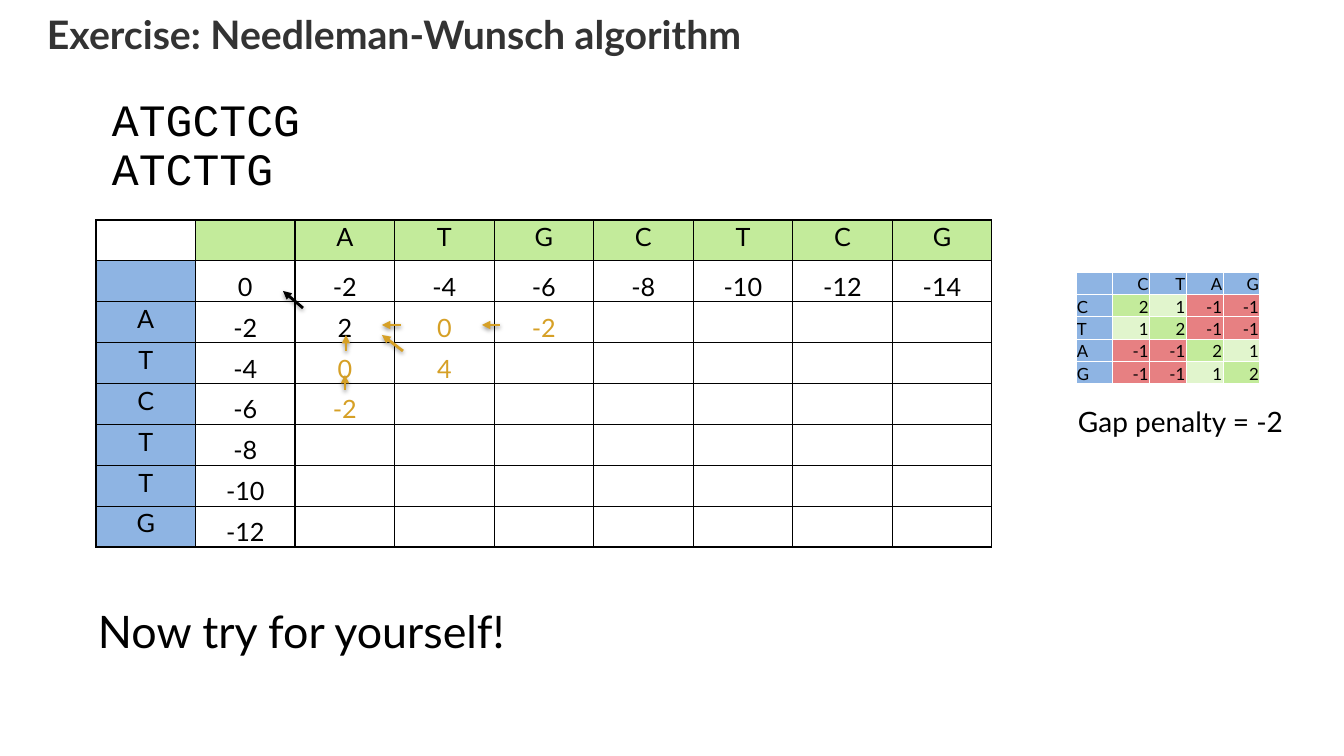
from lxml import etree
from pptx import Presentation
from pptx import util as u
from pptx.dml.color import RGBColor
from pptx.enum import shapes, text
from pptx.oxml import parse_xml
from pptx.oxml.ns import nsdecls, qn

EMU_PER_PX = 914400 / 100.8
COLORS = {
    "black": "000000", "white": "FFFFFF", "title": "333333", "amber": "D6A026",
    "green": "C3EB9B", "pale": "E1F5CD", "blue": "8EB4E3", "red": "E78082",
}
GAP = -2
ACROSS, DOWN = "ATGCTCG", "ATCTTG"
BASES = "CTAG"
SCORE_FILLS = {2: "green", 1: "pale", -1: "red"}
# Scores already worked out, by (row, column) of the alignment table
WORKED = {(2, 2): 2, (2, 3): 0, (2, 4): -2, (3, 2): 0, (3, 3): 4, (4, 2): -2}


def px(length):
    return u.Emu(round(length * EMU_PER_PX))


def rgb(name):
    return RGBColor.from_string(COLORS[name])


def style_para(para, size, font="Lato", color="black", bold=False, align=None):
    para.line_spacing = 0.9
    para.alignment = align
    for span in para.runs:
        span.font.name = font
        span.font.size = u.Pt(size)
        span.font.bold = bold
        span.font.color.rgb = rgb(color)
    if not para.runs:
        para._p.get_or_add_endParaRPr().set("sz", str(size * 100))


def add_title(page, words):
    title = page.shapes.title
    title.left, title.top, title.width, title.height = map(px, (47, 16, 1137, 91))
    frame = title.text_frame
    frame.margin_left = frame.margin_top = frame.margin_right = frame.margin_bottom = 0
    frame.vertical_anchor = text.MSO_ANCHOR.TOP
    frame.text = words
    style_para(frame.paragraphs[0], 28, color="title", bold=True,
               align=text.PP_ALIGN.LEFT)


def add_label(page, place, words, size, font="Lato"):
    frame = page.shapes.add_textbox(*map(px, place)).text_frame
    frame.word_wrap = False
    frame.auto_size = text.MSO_AUTO_SIZE.SHAPE_TO_FIT_TEXT
    frame.text = words
    for para in frame.paragraphs:
        style_para(para, size, font)


def add_grid(page, place, rows, columns, border):
    left, top, width, height = map(px, place)
    table = page.shapes.add_table(rows, columns, left, top, width, height).table
    for column in table.columns:
        column.width = u.Emu(width // columns)
    for row in table.rows:
        row.height = u.Emu(height // rows)
    for cell in table.iter_cells():
        for side in ("lnL", "lnR", "lnT", "lnB"):
            cell._tc.get_or_add_tcPr().append(parse_xml(
                f'<a:{side} {nsdecls("a")} w="12700"><a:solidFill>'
                f'<a:srgbClr val="{COLORS[border]}"/></a:solidFill></a:{side}>'))
    return table


def fill_cell(cell, value, fill, size, align, color="black", tight=True):
    cell.fill.solid()
    cell.fill.fore_color.rgb = rgb(fill)
    if tight:
        cell.margin_left = cell.margin_right = cell.margin_top = px(1)
        cell.margin_bottom = 0
        cell.vertical_anchor = text.MSO_ANCHOR.BOTTOM
    cell.text = str(value)
    style_para(cell.text_frame.paragraphs[0], size, color=color, align=align)


def alignment_cell(row, column):
    """Value, fill and text colour of one cell of the alignment table."""
    if row == 0:
        return ("  " + ACROSS)[column].strip(), "green" if column else "white", "black"
    if column == 0:
        return (" " + DOWN)[row - 1].strip(), "blue", "black"
    if row == 1 or column == 1:
        return GAP * (row + column - 2), "white", "black"
    color = "black" if (row, column) == (2, 2) else "amber"
    return WORKED.get((row, column), ""), "white", color


def add_alignment_table(page):
    rows, columns = len(DOWN) + 2, len(ACROSS) + 2
    table = add_grid(page, (96, 220, 896, 327), rows, columns, "black")
    for row in range(rows):
        for column in range(columns):
            value, fill, color = alignment_cell(row, column)
            scored = row > 0 and column > 0 and value != ""
            fill_cell(table.cell(row, column), value, fill, 18,
                      text.PP_ALIGN.CENTER, color, tight=scored)


def substitution_score(one, other):
    if one == other:
        return 2
    return 1 if {one, other} in ({"C", "T"}, {"A", "G"}) else -1


def add_score_table(page):
    side = len(BASES) + 1
    table = add_grid(page, (1076, 272, 184, 112), side, side, "white")
    fill_cell(table.cell(0, 0), "", "blue", 12, None)
    for row, base in enumerate(BASES, 1):
        fill_cell(table.cell(0, row), base, "blue", 12, text.PP_ALIGN.RIGHT)
        fill_cell(table.cell(row, 0), base, "blue", 12, text.PP_ALIGN.LEFT)
        for column, other in enumerate(BASES, 1):
            score = substitution_score(base, other)
            fill_cell(table.cell(row, column), score, SCORE_FILLS[score], 12,
                      text.PP_ALIGN.RIGHT)


def add_arrow(page, start, end, color="amber"):
    arrow = page.shapes.add_connector(
        shapes.MSO_CONNECTOR.STRAIGHT, *map(px, start + end))
    arrow.line.width = u.Pt(2)
    arrow.line.color.rgb = rgb(color)
    etree.SubElement(arrow.line._get_or_add_ln(), qn("a:tailEnd"), type="triangle")
    # Soft shadow straight below the line
    arrow._element.spPr.append(parse_xml(
        f'<a:effectLst {nsdecls("a")}><a:outerShdw blurRad="39370" dist="20320" '
        f'dir="5400000" rotWithShape="0"><a:srgbClr val="{COLORS["black"]}">'
        '<a:alpha val="38000"/></a:srgbClr></a:outerShdw></a:effectLst>'))


def main():
    deck = Presentation()
    deck.slide_width, deck.slide_height = px(1344), px(756)
    page = deck.slides.add_slide(deck.slide_layouts[5])
    add_title(page, "Exercise: Needleman-Wunsch algorithm")

    # Alignment table and the two sequences
    add_alignment_table(page)
    add_label(page, (102, 93, 211, 109), f"{ACROSS}\n{DOWN}", 32, "Courier New")

    # Scoring scheme
    add_score_table(page)
    add_label(page, (1068, 403, 233, 40), f"Gap penalty = {GAP}", 20)

    # Traceback arrows
    add_arrow(page, (303, 308), (283, 291), "black")
    for start, end in (
        ((401, 325), (382, 325)),
        ((403, 351), (382, 335)),
        ((346, 351), (346, 335)),
        ((345, 390), (345, 375)),
        ((500, 325), (482, 325)),
    ):
        add_arrow(page, start, end)

    add_label(page, (88, 605, 432, 59), "Now try for yourself!", 32)
    deck.save("out.pptx")


if __name__ == "__main__":
    main()
